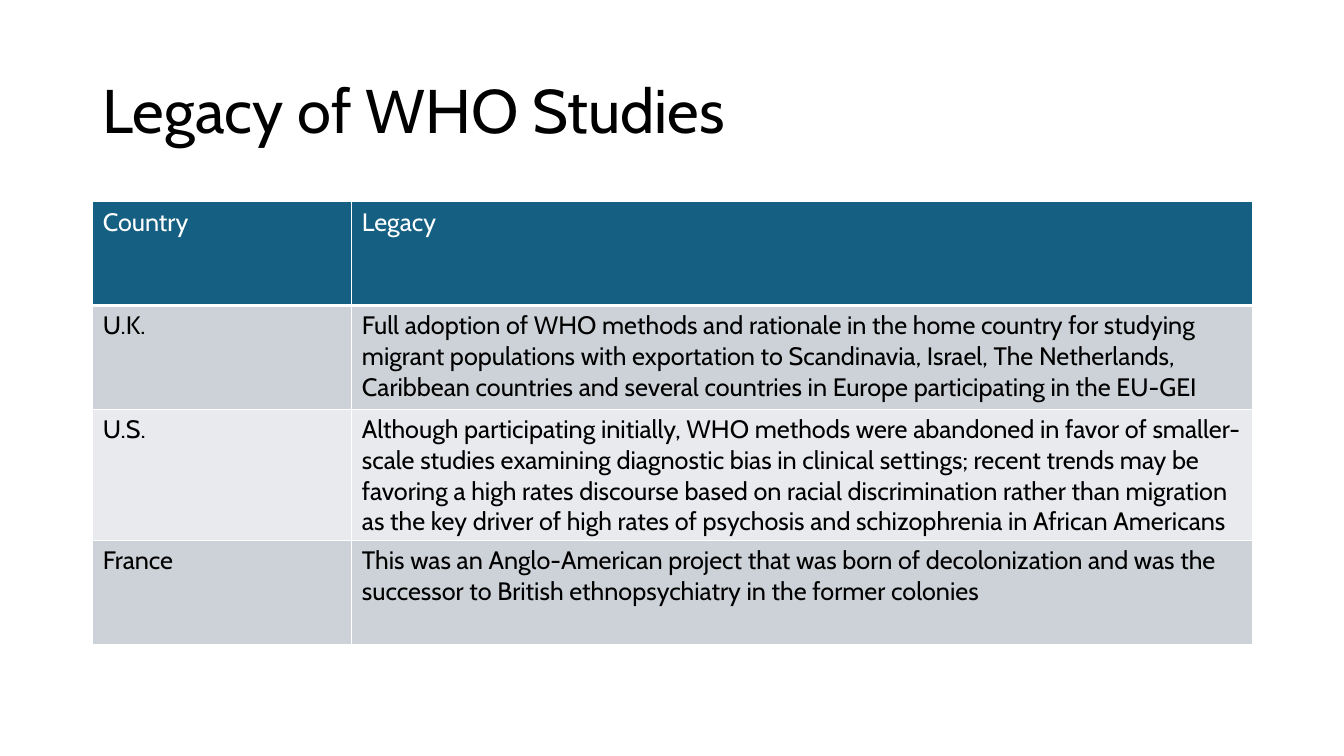
"""Builds a slide with a table on the legacy of the WHO studies by country."""
import pptx
import pptx.dml.color
import pptx.enum.text
import pptx.oxml
import pptx.oxml.ns
import pptx.util

Inches = pptx.util.Inches
WHITE = pptx.dml.color.RGBColor(0xFF, 0xFF, 0xFF)
BLACK = pptx.dml.color.RGBColor(0x00, 0x00, 0x00)
TEAL = pptx.dml.color.RGBColor(0x15, 0x60, 0x82)
GREY = pptx.dml.color.RGBColor(0xCC, 0xD2, 0xD8)
PALE = pptx.dml.color.RGBColor(0xE8, 0xEA, 0xED)

FONT = "Cabin"
LEFT = 0.92
COLUMN_WIDTHS = (2.57, 8.93)
WIDTH = sum(COLUMN_WIDTHS)
ROW_HEIGHT = 1.03
LEGACIES = (
    ("Country", "Legacy"),
    ("U.K.", "Full adoption of WHO methods and rationale in the home country "
     "for studying migrant populations with exportation to Scandinavia, "
     "Israel, The Netherlands, Caribbean countries and several countries in "
     "Europe participating in the EU-GEI"),
    ("U.S.", "Although participating initially, WHO methods were abandoned in "
     "favor of smaller-scale studies examining diagnostic bias in clinical "
     "settings; recent trends may be favoring a high rates discourse based on "
     "racial discrimination rather than migration as the key driver of high "
     "rates of psychosis and schizophrenia in African Americans"),
    ("France", "This was an Anglo-American project that was born of "
     "decolonization and was the successor to British ethnopsychiatry in the "
     "former colonies"),
)


def write_text(frame, text, size, color):
    """Put one formatted paragraph in a text frame and return it."""
    para = frame.paragraphs[0]
    span = para.add_run()
    span.text = text
    for name, value in {"name": FONT, "size": pptx.util.Pt(size)}.items():
        setattr(span.font, name, value)
    span.font.color.rgb = color
    return para


def add_title(page, text):
    """Add the slide title."""
    box = page.shapes.add_textbox(
        Inches(LEFT), Inches(0.4), Inches(WIDTH), Inches(1.45))
    settings = {
        "word_wrap": True,
        "vertical_anchor": pptx.enum.text.MSO_ANCHOR.MIDDLE,
    }
    for name, value in settings.items():
        setattr(box.text_frame, name, value)
    write_text(box.text_frame, text, 44, BLACK).line_spacing = 0.9


def set_borders(cell, bottom_width):
    """Draw white borders around a cell, with a given width at the bottom."""
    properties = cell._tc.get_or_add_tcPr()
    widths = {"lnL": 1, "lnR": 1, "lnT": 1, "lnB": bottom_width}
    for position, (side, width) in enumerate(widths.items()):
        border = pptx.oxml.parse_xml(
            f'<a:{side} {pptx.oxml.ns.nsdecls("a")} w="{pptx.util.Pt(width)}">'
            f'<a:solidFill><a:srgbClr val="{WHITE}"/></a:solidFill></a:{side}>')
        properties.insert(position, border)


def add_legacy_table(page, records):
    """Add the table with a header row and banded body rows."""
    table = page.shapes.add_table(
        len(records), len(COLUMN_WIDTHS), Inches(LEFT), Inches(2),
        Inches(WIDTH), Inches(ROW_HEIGHT * len(records))).table
    for column, width in zip(table.columns, COLUMN_WIDTHS):
        column.width = Inches(width)
    for index, record in enumerate(records):
        table.rows[index].height = Inches(ROW_HEIGHT)
        is_header = index == 0
        fill = TEAL if is_header else (PALE, GREY)[index % 2]
        for cell, text in zip(table.rows[index].cells, record):
            cell.fill.solid()
            cell.fill.fore_color.rgb = fill
            set_borders(cell, 3 if is_header else 1)
            write_text(cell.text_frame, text, 18,
                       WHITE if is_header else BLACK).font.bold = False


def main():
    """Build and save the deck."""
    deck = pptx.Presentation()
    size = {"slide_width": Inches(13.33), "slide_height": Inches(7.5)}
    for name, value in size.items():
        setattr(deck, name, value)
    page = deck.slides.add_slide(deck.slide_layouts[6])
    add_title(page, "Legacy of WHO Studies")
    add_legacy_table(page, LEGACIES)
    deck.save("out.pptx")


if __name__ == "__main__":
    main()
